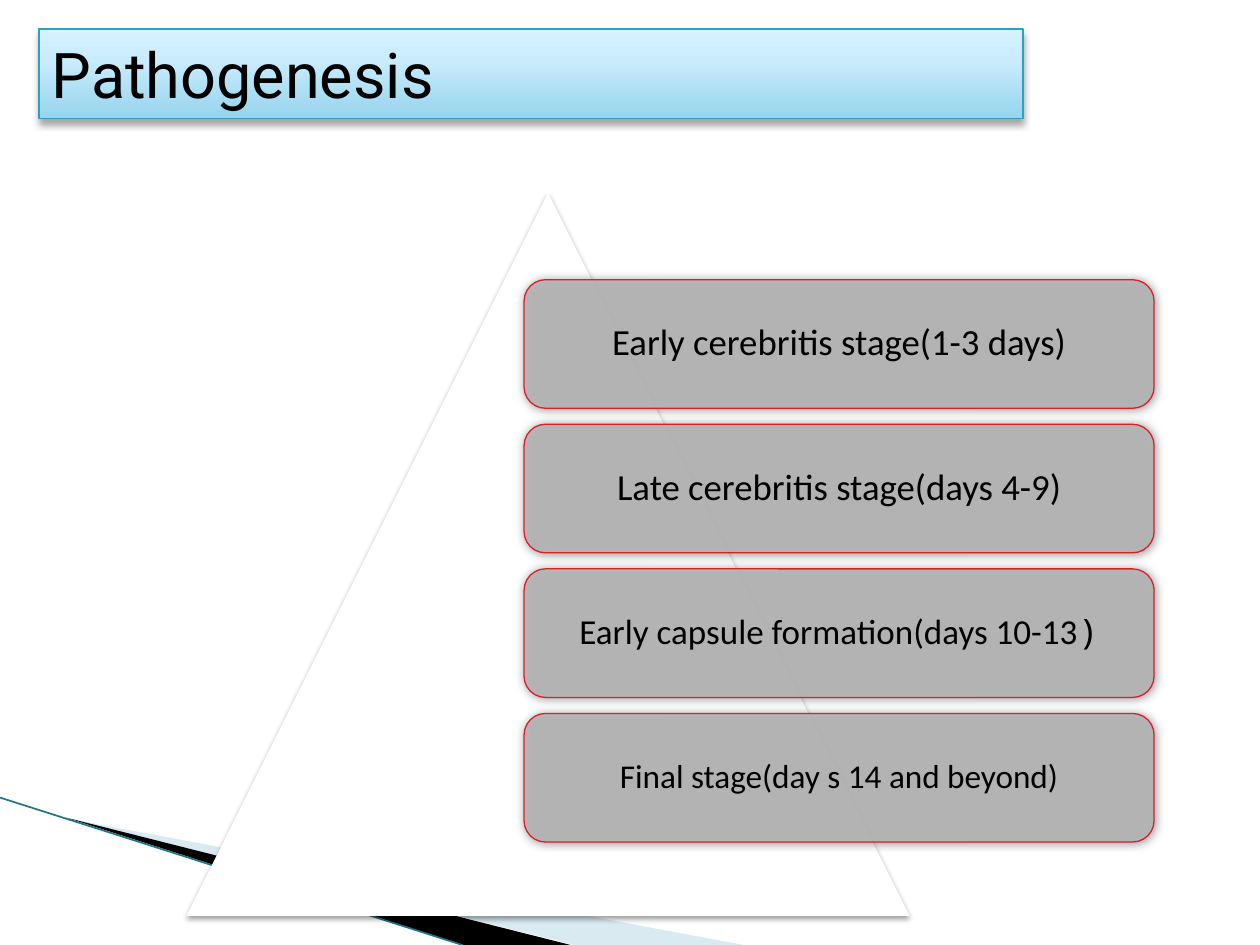
from lxml import etree
from pptx import Presentation
from pptx.dml.color import RGBColor
from pptx.enum.shapes import MSO_CONNECTOR, MSO_SHAPE
from pptx.enum.text import MSO_ANCHOR, PP_ALIGN
from pptx.oxml.ns import qn
from pptx.util import Inches, Pt

TRI, ROUND = MSO_SHAPE.ISOSCELES_TRIANGLE, MSO_SHAPE.ROUNDED_RECTANGLE
TOP, MIDDLE = MSO_ANCHOR.TOP, MSO_ANCHOR.MIDDLE
LEFT, CENTER = PP_ALIGN.LEFT, PP_ALIGN.CENTER

WIDE, HIGH = 10, 7.5
COLORS = {"white": "FFFFFF", "black": "000000", "pale": "A0CBDC",
          "teal": "1F7488", "gray": "B5B5B5", "red": "DA1F28", "edge": "2DA2BF"}
TITLE = "Pathogenesis"
GRAD = [(0, "96D4EE"), (65, "C9ECFC"), (100, "D7F2FF")]
# runs of (text, font), size, inset
STAGES = [
    ([("Early cerebritis stage(1-3 days)", "Calibri")], 21, 0.09),
    ([("Late cerebritis stage(days 4-9)", "Calibri")], 21, 0.09),
    ([("Early capsule formation(days 10-13", "Calibri"),
      (")", "Noto Sans Mono")], 20, 0.08),
    ([("Final stage(day s 14 and beyond)", "Calibri")], 19, 0.08),
]
# points, color, opacity
WEDGES = [
    ([(0.55, 6.5), (5.9, HIGH), (4.56, HIGH)], "pale", 40),
    ([(0.53, 6.49), (4.53, HIGH), (3.68, HIGH)], "black", 100),
]
SIDE = 5.74
TRI_X, TRI_Y = 1.48, 1.53
BOX_X, BOX_Y, BOX_W, BOX_H = 4.16, 2.22, 5, 1.02
STEP = BOX_H * 9 / 8


def color(name):
    return RGBColor.from_string(COLORS[name])


def paint(shape, fill, alpha=100, line=None):
    shape.fill.solid()
    shape.fill.fore_color.rgb = color(fill)
    if alpha < 100:
        node = shape._element.spPr.find(qn("a:solidFill"))[0]
        etree.SubElement(node, qn("a:alpha"), val=str(alpha * 1000))
    edge(shape, line)


def edge(shape, line):
    if line:
        shape.line.color.rgb = color(line)
        shape.line.width = Pt(0.75)
    else:
        shape.line.fill.background()


def shade(shape, alpha, blur, dist):
    """Add a black shadow falling straight down."""
    shape.shadow.inherit = False
    node = shape._element.spPr.find(qn("a:effectLst"))
    cast = etree.SubElement(node, qn("a:outerShdw"), blurRad=str(Pt(blur)),
                            dist=str(Pt(dist)), dir="5400000", rotWithShape="0")
    tint = etree.SubElement(cast, qn("a:srgbClr"), val=COLORS["black"])
    etree.SubElement(tint, qn("a:alpha"), val=str(alpha * 1000))


def style(run, face, size):
    run.font.name = face
    run.font.size = Pt(size)
    run.font.color.rgb = color("black")


def place(shape, *box):
    shape.left, shape.top, shape.width, shape.height = map(Inches, box)


def add_wedge(slide, points, fill, alpha):
    spots = [(Inches(x), Inches(y)) for x, y in points]
    draft = slide.shapes.build_freeform(*spots[0])
    draft.add_line_segments(spots[1:], close=True)
    wedge = draft.convert_to_shape()
    wedge.shadow.inherit = False
    paint(wedge, fill, alpha)


def add_stage(slide, row, runs, size, inset):
    box = slide.shapes.add_shape(ROUND, 0, 0, 0, 0)
    place(box, BOX_X, BOX_Y + row * STEP, BOX_W, BOX_H)
    paint(box, "gray", 90, "red")
    shade(box, 40, 5, 0)
    frame = box.text_frame
    frame.word_wrap = True
    frame.vertical_anchor = MIDDLE
    frame.margin_left = frame.margin_right = Inches(inset)
    frame.margin_top = frame.margin_bottom = Inches(inset)
    para = frame.paragraphs[0]
    para.alignment = CENTER
    para.line_spacing = 0.9
    for text, face in runs:
        run = para.add_run()
        run.text = text
        style(run, face, size)


def set_title(title):
    place(title, 0.31, 0.23, 7.81, 0.71)
    title.fill.gradient()
    title.fill.gradient_angle = 90
    stops = title._element.spPr.find(qn("a:gradFill")).find(qn("a:gsLst"))
    for stop in list(stops):
        stops.remove(stop)
    for pos, tint in GRAD:
        stop = etree.SubElement(stops, qn("a:gs"), pos=str(pos * 1000))
        etree.SubElement(stop, qn("a:srgbClr"), val=tint)
    edge(title, "edge")
    shade(title, 35, 4, 3)
    frame = title.text_frame
    frame.text = TITLE
    frame.vertical_anchor = TOP
    para = frame.paragraphs[0]
    para.alignment = LEFT
    style(para.runs[0], "Roboto", 36)


def main():
    deck = Presentation()
    deck.slide_width, deck.slide_height = Inches(WIDE), Inches(HIGH)
    slide = deck.slides.add_slide(deck.slide_layouts[5])
    set_title(slide.shapes.title)
    for wedge in WEDGES:
        add_wedge(slide, *wedge)
    line = slide.shapes.add_connector(MSO_CONNECTOR.STRAIGHT, 0, Inches(6.33),
                                      Inches(3.67), Inches(HIGH))
    line.line.color.rgb = color("teal")
    line.line.width = Pt(0.95)
    etree.SubElement(line._element.spPr, qn("a:effectLst"))
    peak = slide.shapes.add_shape(TRI, 0, 0, 0, 0)
    place(peak, TRI_X, TRI_Y, SIDE, SIDE)
    paint(peak, "white")
    shade(peak, 38, 3.1, 1.6)
    for row, stage in enumerate(STAGES):
        add_stage(slide, row, *stage)
    deck.save("out.pptx")


if __name__ == "__main__":
    main()
